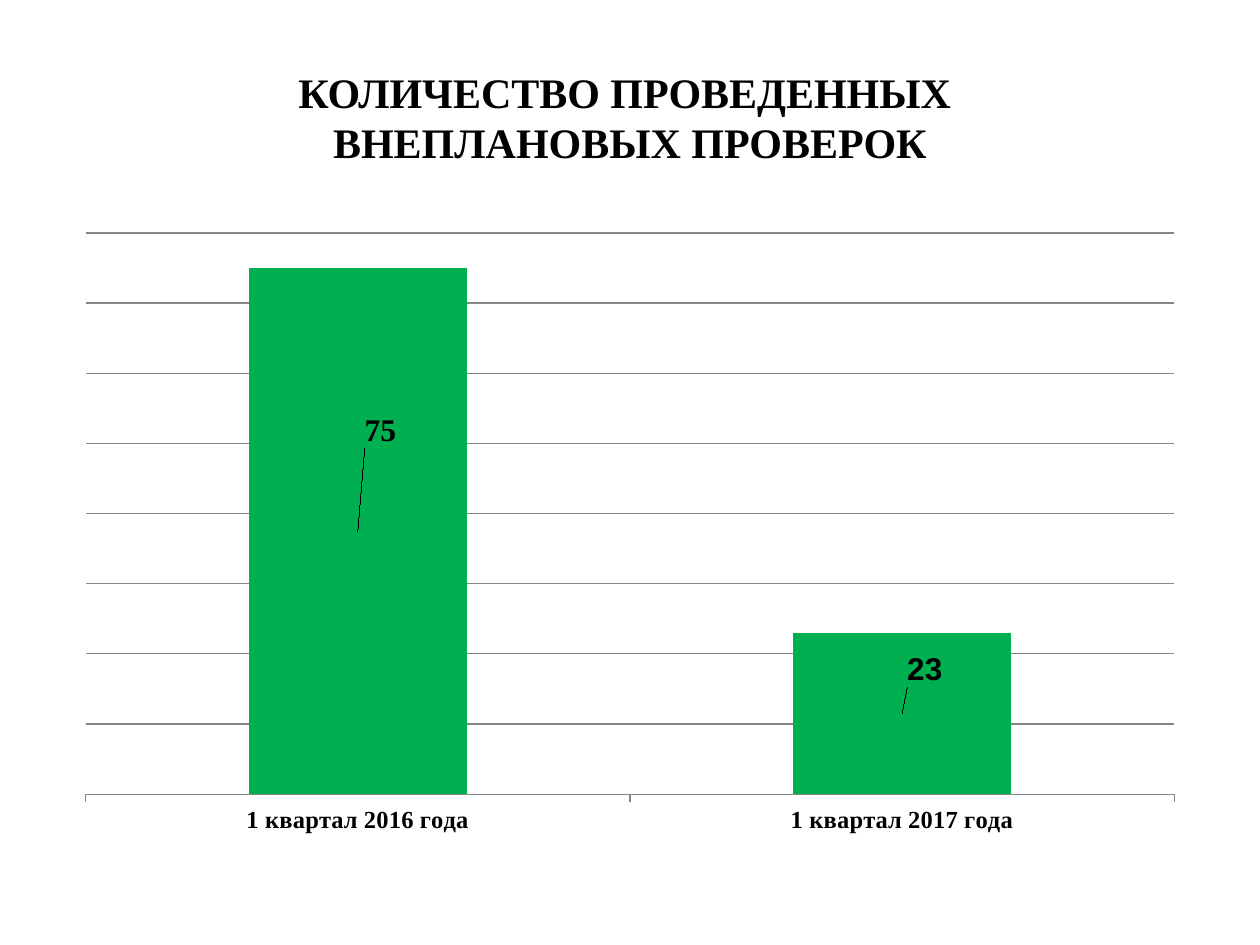
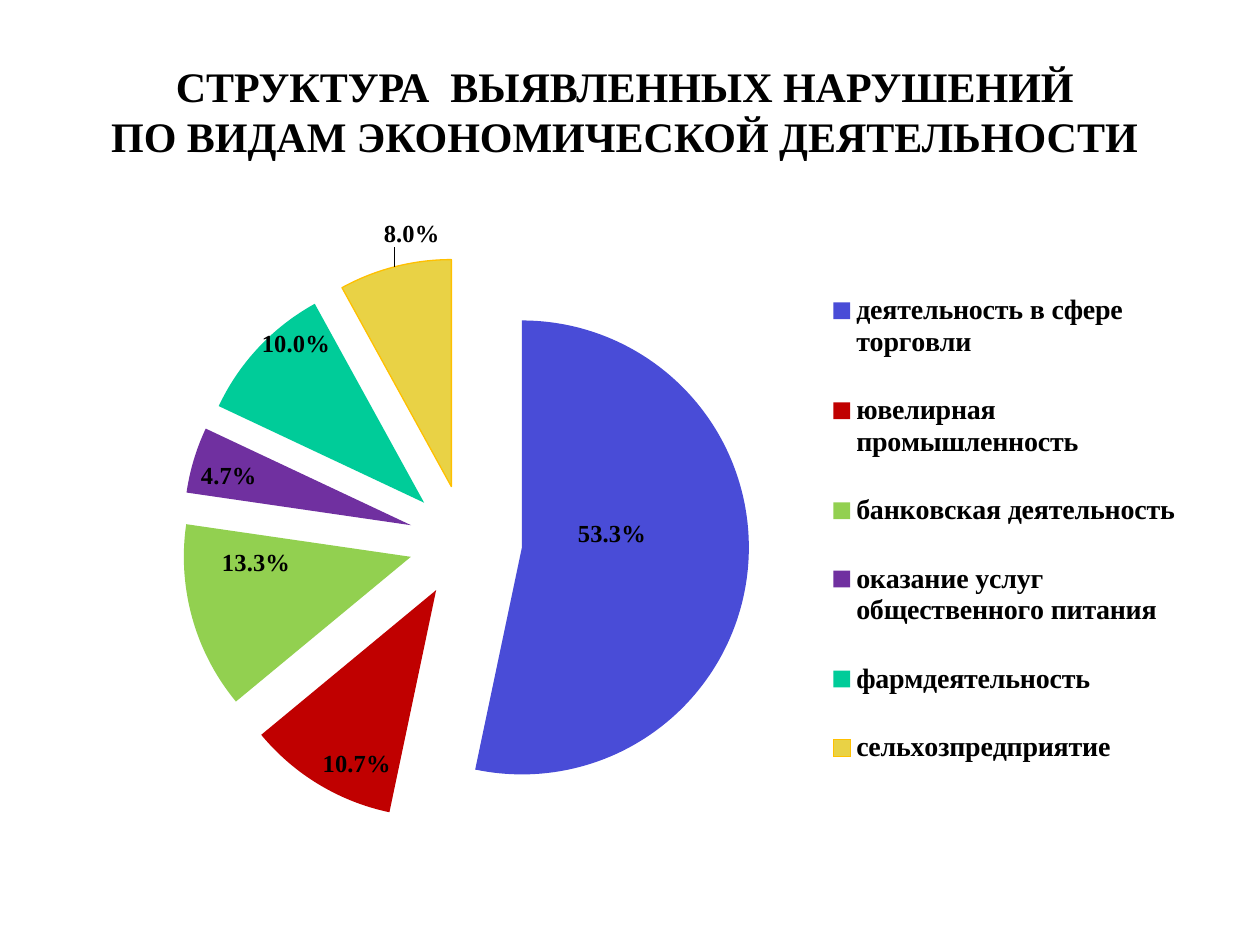
from pptx import Presentation
from pptx.chart.data import CategoryChartData
from pptx.dml.color import RGBColor
from pptx.enum.chart import XL_CHART_TYPE, XL_LABEL_POSITION, XL_LEGEND_POSITION, XL_TICK_MARK
from pptx.enum.text import MSO_ANCHOR, PP_ALIGN
from pptx.oxml import parse_xml
from pptx.oxml.ns import nsdecls
from pptx.util import Inches, Pt

SERIF = "Times New Roman"
SANS = "Arial"
BLACK = "000000"
GRID_GRAY = "868686"
BAR_GREEN = "00B050"
YELLOW_EDGE = "FFC000"


def style_font(font, size, name=SERIF, bold=True, color=BLACK):
    font.size = Pt(size)
    font.name = name
    font.bold = bold
    font.color.rgb = RGBColor.from_string(color)


def manual_layout(x, y, size=None, inner=False):
    target = '<c:layoutTarget val="inner"/>' if inner else ""
    modes = '<c:xMode val="edge"/><c:yMode val="edge"/>' if size else ""
    extent = f'<c:w val="{size[0]}"/><c:h val="{size[1]}"/>' if size else ""
    return parse_xml(
        f'<c:layout {nsdecls("c")}><c:manualLayout>{target}{modes}'
        f'<c:x val="{x}"/><c:y val="{y}"/>{extent}</c:manualLayout></c:layout>'
    )


presentation = Presentation()
presentation.slide_width = Inches(10)
presentation.slide_height = Inches(7.5)

pages = [
    {
        "title": "КОЛИЧЕСТВО ПРОВЕДЕННЫХ \vВНЕПЛАНОВЫХ ПРОВЕРОК",
        "title_height": 1.25,
        "bottom_margin": 0.05,
        "type": XL_CHART_TYPE.COLUMN_CLUSTERED,
        "format": "General",
        "values": {"1 квартал 2016 года": 75, "1 квартал 2017 года": 23},
        "plot": (0.02, 0.02, (0.96, 0.9)),
    },
    {
        "title": "СТРУКТУРА  ВЫЯВЛЕННЫХ НАРУШЕНИЙ \vПО ВИДАМ ЭКОНОМИЧЕСКОЙ ДЕЯТЕЛЬНОСТИ ",
        "title_height": 1.56,
        "bottom_margin": 0.45,
        "type": XL_CHART_TYPE.PIE,
        "format": "0.0%",
        "values": {
            "деятельность в сфере торговли": 0.533,
            "ювелирная промышленность": 0.107,
            "банковская деятельность": 0.133,
            "оказание услуг общественного питания": 0.047,
            "фармдеятельность": 0.1,
            "сельхозпредприятие": 0.08,
        },
        "plot": (0.04, 0.06, (0.63, 0.91)),
    },
]

charts = []
for page in pages:
    slide = presentation.slides.add_slide(presentation.slide_layouts[5])
    title = slide.shapes.title
    title.left, title.top = Inches(0.5), Inches(0.3)
    title.width, title.height = Inches(9), Inches(page["title_height"])
    text_frame = title.text_frame
    text_frame.text = page["title"]
    text_frame.word_wrap = True
    text_frame.vertical_anchor = MSO_ANCHOR.MIDDLE
    text_frame.margin_bottom = Inches(page["bottom_margin"])
    paragraph = text_frame.paragraphs[0]
    paragraph.alignment = PP_ALIGN.CENTER
    for run in paragraph.runs:
        style_font(run.font, 24)

    chart_data = CategoryChartData(number_format=page["format"])
    chart_data.categories = list(page["values"])
    chart_data.add_series("Series 1", list(page["values"].values()))
    chart = slide.shapes.add_chart(
        page["type"], Inches(0.5), Inches(1.75), Inches(9), Inches(4.95), chart_data
    ).chart
    chart.has_title = False
    chart.has_legend = False
    style_font(chart.font, 10, SANS, False)
    plot_area = chart.element.xpath(".//c:plotArea")[0]
    for layout in plot_area.xpath("./c:layout"):
        plot_area.remove(layout)
    plot_area.insert(0, manual_layout(*page["plot"], inner=True))
    charts.append(chart)

column_chart, pie_chart = charts

column_plot = column_chart.plots[0]
column_plot.gap_width = 150
column_plot.vary_by_categories = False
value_axis = column_chart.value_axis
value_axis.visible = False
value_axis.minimum_scale = 0
value_axis.maximum_scale = 80
value_axis.major_unit = 10
value_axis.has_major_gridlines = True
category_axis = column_chart.category_axis
category_axis.major_tick_mark = XL_TICK_MARK.OUTSIDE
style_font(category_axis.tick_labels.font, 14)
for line in (value_axis.major_gridlines.format.line, category_axis.format.line):
    line.color.rgb = RGBColor.from_string(GRID_GRAY)
    line.width = Pt(0.75)
columns = column_plot.series[0]
columns.format.fill.solid()
columns.format.fill.fore_color.rgb = RGBColor.from_string(BAR_GREEN)
for index, name in enumerate((SERIF, SANS)):
    label = columns.points[index].data_label
    style_font(label.font, 18, name)
    label.position = XL_LABEL_POSITION.CENTER

pie_chart.has_legend = True
legend = pie_chart.legend
legend.position = XL_LEGEND_POSITION.RIGHT
legend.include_in_layout = False
style_font(legend.font, 16)
legend_element = pie_chart.element.xpath(".//c:legend")[0]
legend_element.xpath("./c:legendPos")[0].addnext(manual_layout(0.67, 0.06, (0.32, 0.87)))

pie_plot = pie_chart.plots[0]
pie_plot.vary_by_categories = True
sectors = pie_plot.series[0]
pie_chart.element.xpath(".//c:ser/c:tx")[0].addnext(
    parse_xml(f'<c:explosion {nsdecls("c")} val="25"/>')
)
labels = sectors.data_labels
labels.show_value = True
labels.number_format = "0.0%"
labels.number_format_is_linked = False
style_font(labels.font, 14)
center, inside = XL_LABEL_POSITION.CENTER, XL_LABEL_POSITION.INSIDE_END
sector_styles = [
    ("494CD7", center),
    ("C00000", inside),
    ("92D050", center),
    ("7030A0", inside),
    ("00CC99", center),
    ("E9D245", center),
]
for index, (color, position) in enumerate(sector_styles):
    point = sectors.points[index]
    point.format.fill.solid()
    point.format.fill.fore_color.rgb = RGBColor.from_string(color)
    style_font(point.data_label.font, 14)
    point.data_label.position = position
yellow_line = sectors.points[5].format.line
yellow_line.color.rgb = RGBColor.from_string(YELLOW_EDGE)
yellow_line.width = Pt(0.75)

label_shifts = [
    (column_chart, {0: (0.02, -0.16), 1: (0.02, -0.07)}),
    (pie_chart, {0: (-0.02, -0.04), 2: (-0.04, -0.04), 4: (-0.04, -0.13), 5: (-0.01, -0.23)}),
]
for chart, shifts in label_shifts:
    label_elements = chart.element.xpath(".//c:dLbl")
    for index, shift in shifts.items():
        label_elements[index].insert(1, manual_layout(*shift))

presentation.save("out.pptx")
